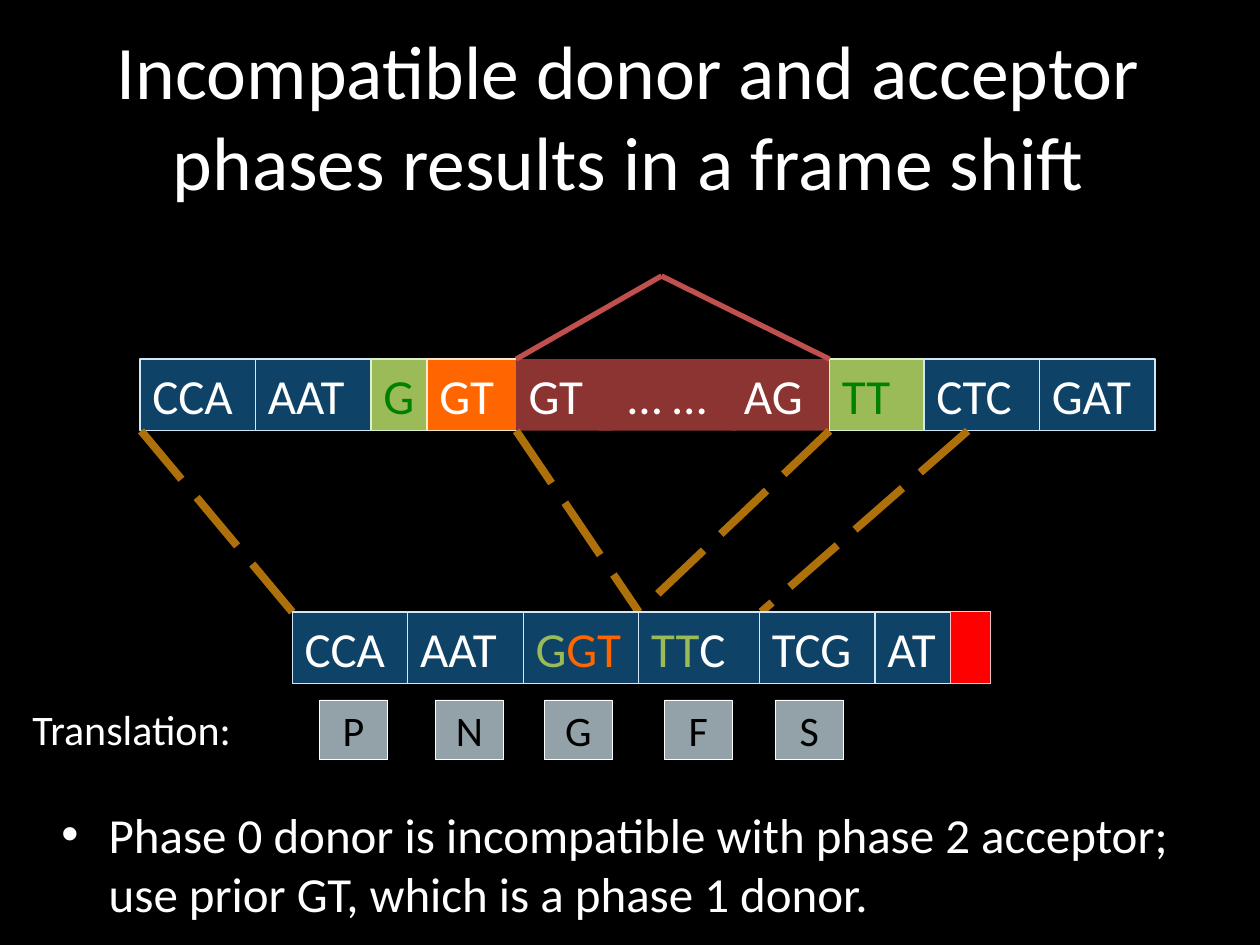
from lxml import etree
from pptx import Presentation
from pptx.dml.color import RGBColor
from pptx.enum.dml import MSO_LINE
from pptx.enum.shapes import MSO_CONNECTOR, MSO_SHAPE
from pptx.enum.text import MSO_ANCHOR, PP_ALIGN
from pptx.oxml.ns import qn
from pptx.util import Pt

RECTANGLE = MSO_SHAPE.RECTANGLE
STRAIGHT = MSO_CONNECTOR.STRAIGHT
LONG_DASH = MSO_LINE.LONG_DASH
TOP, MIDDLE = MSO_ANCHOR.TOP, MSO_ANCHOR.MIDDLE
LEFT, CENTER = PP_ALIGN.LEFT, PP_ALIGN.CENTER

BLACK = RGBColor(0x00, 0x00, 0x00)
WHITE = RGBColor(0xFF, 0xFF, 0xFF)
NAVY = RGBColor(0x0E, 0x43, 0x67)
PALE_BLUE = RGBColor(0xCF, 0xE7, 0xF8)
ORANGE = RGBColor(0xFF, 0x66, 0x00)
PALE_ORANGE = RGBColor(0xFC, 0xEA, 0xCD)
INTRON_RED = RGBColor(0x8B, 0x34, 0x31)
SPLICE_RED = RGBColor(0xC0, 0x50, 0x4D)
LIGHT_GREEN = RGBColor(0x9B, 0xBB, 0x59)
PALE_GREEN = RGBColor(0xDB, 0xF1, 0xCE)
DARK_GREEN = RGBColor(0x00, 0x80, 0x00)
GRAY = RGBColor(0x93, 0xA2, 0xA8)
BROWN = RGBColor(0xAE, 0x70, 0x0A)
RED = RGBColor(0xFF, 0x00, 0x00)
PINK = RGBColor(0xFB, 0xC3, 0xC8)

FONT = "Calibri"
BLOCK_HEIGHT = 41
GENE_TOP = 205.2
MRNA_TOP = 349.7
MRNA_LEFT = 167


def write_text(shape, runs, size=28, color=WHITE, align=LEFT, anchor=TOP, bullet=None):
    """Write a string, or a list of (text, color) runs, as one paragraph."""
    frame = shape.text_frame
    frame.word_wrap = True
    frame.vertical_anchor = anchor
    paragraph = frame.paragraphs[0]
    paragraph.alignment = align
    if bullet:
        properties = paragraph._p.get_or_add_pPr()
        properties.set("marL", str(Pt(27)))
        properties.set("indent", str(-Pt(27)))
        etree.SubElement(properties, qn("a:buFont")).set("typeface", "Arial")
        etree.SubElement(properties, qn("a:buChar")).set("char", bullet)
    for text, run_color in [(runs, color)] if isinstance(runs, str) else runs:
        run = paragraph.add_run()
        run.text = text
        run.font.name = FONT
        run.font.size = Pt(size)
        run.font.color.rgb = run_color


def add_label(slide, text, left, top, width, height, **text_format):
    label = slide.shapes.add_textbox(Pt(left), Pt(top), Pt(width), Pt(height))
    write_text(label, text, **text_format)


def add_block(slide, runs, left, top, width, height=BLOCK_HEIGHT, fill=NAVY,
              outline=PALE_BLUE, outline_width=0.75, **text_format):
    block = slide.shapes.add_shape(RECTANGLE, Pt(left), Pt(top), Pt(width), Pt(height))
    block.shadow.inherit = False
    block.fill.solid()
    block.fill.fore_color.rgb = fill
    if outline is None:
        block.line.fill.background()
    else:
        block.line.color.rgb = outline
        block.line.width = Pt(outline_width)
    if runs:
        write_text(block, runs, **text_format)


def add_line(slide, start, end, color, width, dash=None):
    line = slide.shapes.add_connector(
        STRAIGHT, Pt(start[0]), Pt(start[1]), Pt(end[0]), Pt(end[1]))
    line.line.color.rgb = color
    line.line.width = Pt(width)
    if dash:
        line.line.dash_style = dash
    etree.SubElement(line._element.spPr, qn("a:effectLst"))


def add_gene(slide):
    exon = {}
    split_codon = {"fill": LIGHT_GREEN, "outline": PALE_GREEN, "color": DARK_GREEN}
    prior_donor = {"fill": ORANGE, "outline": PALE_ORANGE}
    intron = {"fill": INTRON_RED, "outline": None}
    blocks = [
        ("CCA", 80, 66, exon), ("AAT", 146, 66, exon),
        ("G", 212, 32, split_codon), ("GT", 244, 51, prior_donor),
        ("… …", 342, 78.5, {**intron, "align": CENTER}),
        ("GT", 295, 55, intron), ("AG", 418, 56, intron),
        ("TT", 474, 54, split_codon), ("CTC", 528, 66, exon), ("GAT", 594, 66, exon),
    ]
    for text, left, width, style in blocks:
        add_block(slide, text, left, GENE_TOP, width, **style)

    # Splice mark over the intron
    for corner in (295, 474):
        add_line(slide, (corner, GENE_TOP), (378, 157.7), SPLICE_RED, 3)


def add_mrna(slide):
    # Dashed guides from the gene to the spliced codons
    for gene_x, mrna_x in [(80.6, 167), (295, 365), (474, 365), (553, 435)]:
        add_line(slide, (gene_x, GENE_TOP + BLOCK_HEIGHT), (mrna_x, MRNA_TOP),
                 BROWN, 4.5, LONG_DASH)

    codons = [
        ("CCA", 66), ("AAT", 66),
        ([("G", LIGHT_GREEN), ("GT", ORANGE)], 66),
        ([("TT", LIGHT_GREEN), ("C", WHITE)], 69),
        ("TCG", 66), ("AT", 66),
    ]
    left = MRNA_LEFT
    for runs, width in codons:
        add_block(slide, runs, left, MRNA_TOP, width)
        left += width

    # Missing base at the end of the last codon
    missing_width = 23
    add_block(slide, None, left - missing_width, MRNA_TOP, missing_width,
              fill=RED, outline=PINK, outline_width=0.5)


def add_translation(slide):
    add_label(slide, "Translation:", 11.5, 398.5, 144, 36, size=24)
    for amino_acid, left in zip("PNGFS", (182.5, 248.7, 311, 379.5, 443)):
        add_block(slide, amino_acid, left, 400, 39, 34, fill=GRAY, outline=WHITE,
                  outline_width=0.5, size=24, color=BLACK, align=CENTER, anchor=MIDDLE)


def main():
    presentation = Presentation()
    presentation.slide_width, presentation.slide_height = Pt(720), Pt(540)
    slide = presentation.slides.add_slide(presentation.slide_layouts[6])
    slide.background.fill.solid()
    slide.background.fill.fore_color.rgb = BLACK

    add_label(slide, "Incompatible donor and acceptor phases results in a frame shift",
              28, 9.5, 662, 112, size=43.2, align=CENTER, anchor=MIDDLE)
    add_gene(slide)
    add_mrna(slide)
    add_translation(slide)
    add_label(slide, "Phase 0 donor is incompatible with phase 2 acceptor; "
              "use prior GT, which is a phase 1 donor.",
              28, 456, 682, 71, bullet="•")
    presentation.save("out.pptx")


if __name__ == "__main__":
    main()
